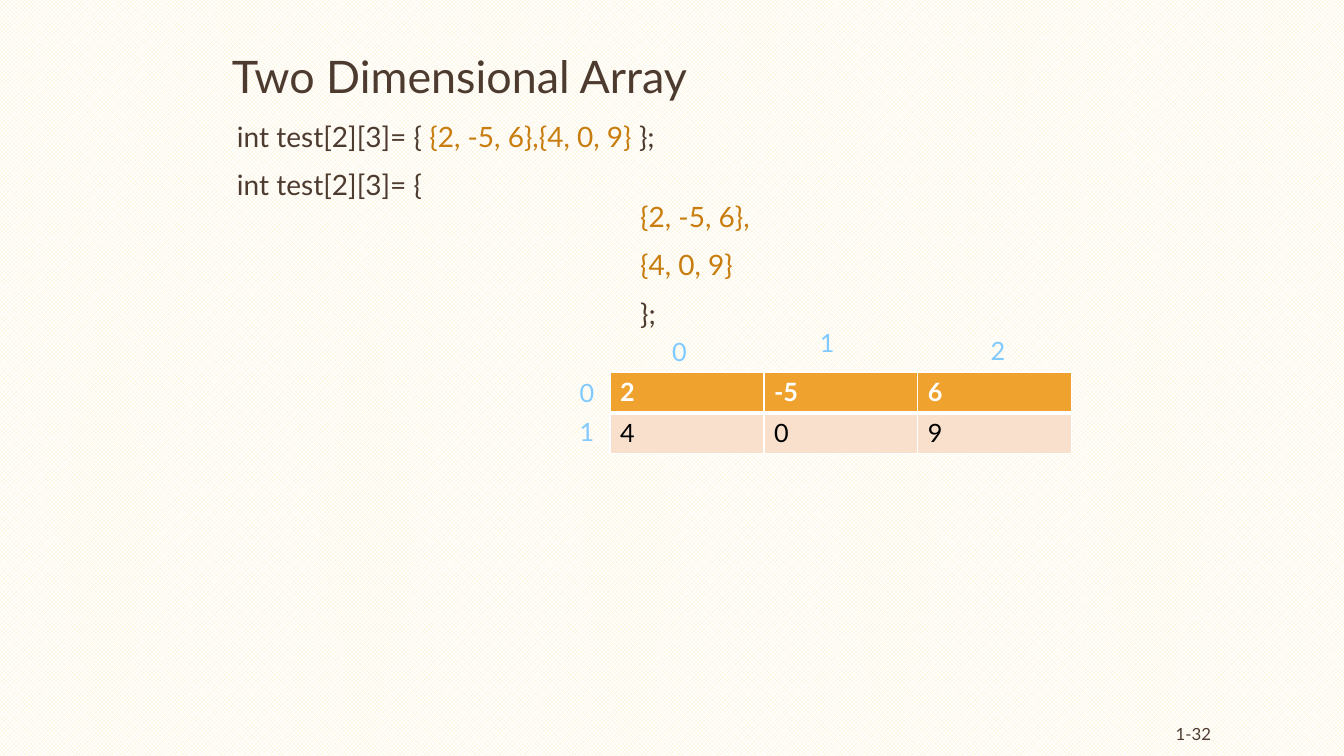
import pptx
import pptx.util
import pptx.oxml
import pptx.dml.color
import pptx.enum.dml
import pptx.enum.text
from collections import namedtuple

COLORS = {
    "brown": "4E3B30", "ochre": "C87D0E", "sky": "80CAFF",
    "white": "FFFFFF", "black": "000000", "cream": "FBEEC9",
    "header": "F0A22E", "row": "F9E0CD",
}
ALIGN = pptx.enum.text.PP_ALIGN
ANCHOR = pptx.enum.text.MSO_ANCHOR
PT = pptx.util.Pt
Box = namedtuple("Box", "left top width height")
PAGE = Box(0, 0, pptx.util.Inches(13.33), pptx.util.Inches(7.5))

CODE = [
    (-4, [("int test[2][3]= { ", "brown"), ("{2, -5, 6},{4, 0, 9} ", "ochre"), ("};", "brown")]),
    (-4, [("int test[2][3]= {", "brown"), None, ("{2, -5, 6},", "ochre")]),
    (0, [("{4, 0, 9}", "ochre")]),
    (0, [("};", "brown")]),
]
VALUES = [["2", "-5", "6"], ["4", "0", "9"]]
COLUMN_LABELS = [(0.04, -0.41), (0.36, -0.51), (0.73, -0.42)]
ROW_LABELS = [(-0.16, 0.09), (-0.16, 0.57)]


def share(box, left, top, width, height):
    return Box(
        int(box.left + left * box.width), int(box.top + top * box.height),
        int(width * box.width), int(height * box.height),
    )


def percent(*values):
    return share(PAGE, *(value / 100 for value in values))


def apply(target, values):
    for name, value in values.items():
        setattr(target, name, value)


def color(name):
    return pptx.dml.color.RGBColor.from_string(COLORS[name])


def add_span(para, text, size, tint, bold=False):
    span = para.add_run()
    span.text = text
    apply(span.font, {"name": "Lato", "size": PT(size), "bold": bold})
    span.font.color.rgb = color(tint)


def add_label(page, box, text, size, tint, align, margin=0):
    label = page.shapes.add_textbox(*box)
    apply(label.text_frame, {
        "word_wrap": True, "vertical_anchor": ANCHOR.MIDDLE,
        "margin_left": margin, "margin_right": margin,
        "margin_top": 0, "margin_bottom": 0,
    })
    para = label.text_frame.paragraphs[0]
    para.alignment = align
    add_span(para, text, size, tint)


def prepare_placeholder(holder, box):
    apply(holder, box._asdict())
    apply(holder.text_frame, {
        "word_wrap": True, "vertical_anchor": ANCHOR.TOP,
        "auto_size": pptx.enum.text.MSO_AUTO_SIZE.NONE,
    })
    return holder.text_frame


def fill_title(page, box):
    para = prepare_placeholder(page.shapes.title, box).paragraphs[0]
    apply(para, {"alignment": ALIGN.LEFT, "line_spacing": 0.89})
    add_span(para, "Two Dimensional Array", 32, "brown")


def fill_code(page, box):
    frame = prepare_placeholder(page.placeholders[1], box)
    for index, (indent, spans) in enumerate(CODE):
        para = frame.add_paragraph() if index else frame.paragraphs[0]
        apply(para, {
            "alignment": ALIGN.LEFT, "line_spacing": 0.94,
            "space_before": PT(10), "space_after": PT(2),
        })
        properties = para._p.get_or_add_pPr()
        properties.set("marL", str(pptx.util.Inches(4)))
        properties.set("indent", str(pptx.util.Inches(indent)))
        properties.append(pptx.oxml.parse_xml(
            '<a:buNone xmlns:a="http://schemas.openxmlformats.org/drawingml/2006/main"/>'))
        for span in spans:
            if span is None:
                para.add_line_break()
            else:
                add_span(para, span[0], 20, span[1])


def add_border(cell, side, width):
    cell._tc.get_or_add_tcPr().append(pptx.oxml.parse_xml(
        f'<a:ln{side} xmlns:a="http://schemas.openxmlformats.org/drawingml/2006/main" '
        f'w="{PT(width)}"><a:solidFill><a:srgbClr val="{COLORS["white"]}"/>'
        f'</a:solidFill></a:ln{side}>'))


def add_array(page, box):
    table = page.shapes.add_table(len(VALUES), len(VALUES[0]), *box).table
    table.horz_banding = False
    for row, values in enumerate(VALUES):
        is_header = row == 0
        for column, value in enumerate(values):
            cell = table.cell(row, column)
            widths = {"L": 1, "R": 1, "T": 1 if is_header else 3, "B": 3 if is_header else 1}
            for side, width in widths.items():
                add_border(cell, side, width)
            cell.fill.solid()
            cell.fill.fore_color.rgb = color("header" if is_header else "row")
            add_span(cell.text_frame.paragraphs[0], value, 18,
                     "white" if is_header else "black", is_header)
    for labels in (COLUMN_LABELS, ROW_LABELS):
        for index, (left, top) in enumerate(labels):
            add_label(page, share(box, left, top, 0.22, 0.31),
                      str(index), 18, "sky", ALIGN.CENTER)


def fill_background(page):
    fill = page.background.fill
    fill.patterned()
    fill.pattern = pptx.enum.dml.MSO_PATTERN.TRELLIS
    fill.fore_color.rgb = color("cream")
    fill.back_color.rgb = color("white")


def main():
    deck = pptx.Presentation()
    apply(deck, {"slide_width": PAGE.width, "slide_height": PAGE.height})
    page = deck.slides.add_slide(deck.slide_layouts[1])
    fill_background(page)
    fill_title(page, percent(16.5, 6.67, 57.9, 10))
    fill_code(page, percent(16.88, 15.47, 66.9, 75.6))
    add_label(page, percent(77.72, 94.13, 13.13, 5.87), "1-32", 12, "brown",
              ALIGN.RIGHT, pptx.util.Inches(0.1))
    add_array(page, percent(45.39, 49.2, 34.36, 10.8))
    deck.save("out.pptx")


if __name__ == "__main__":
    main()
